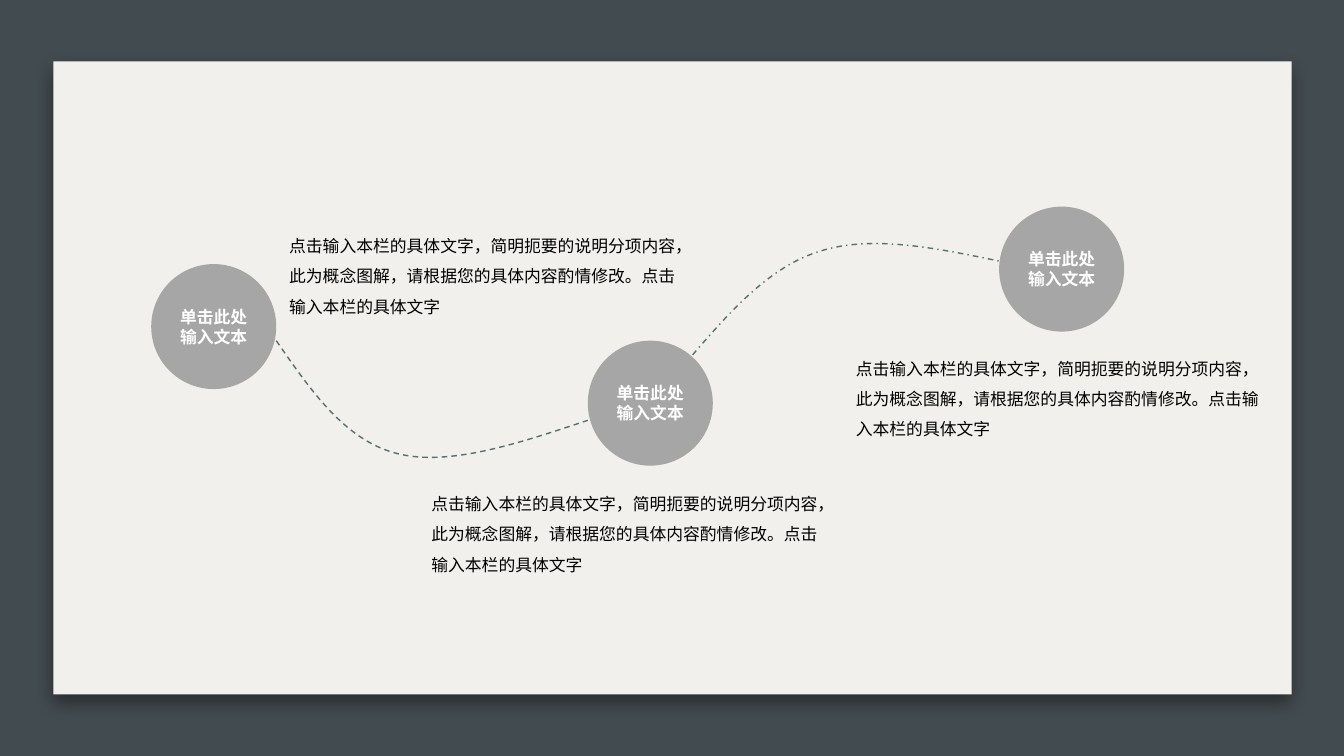
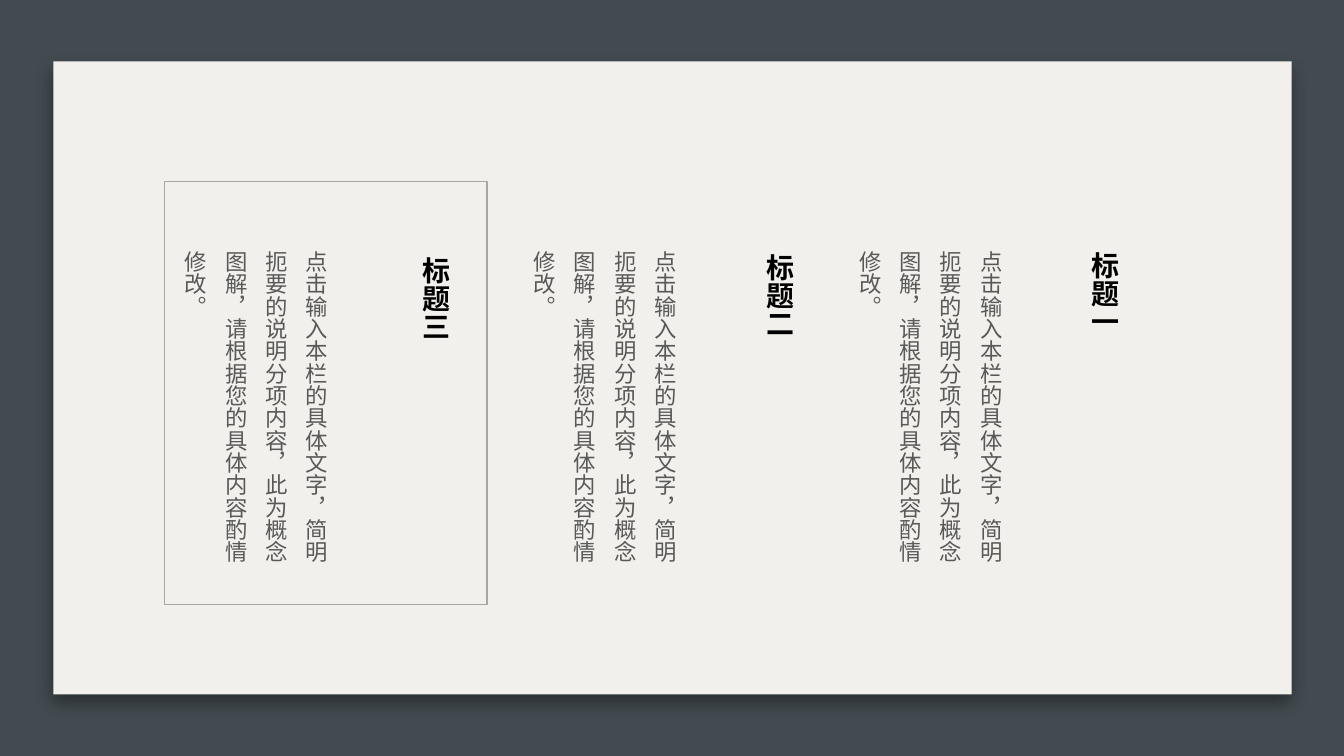
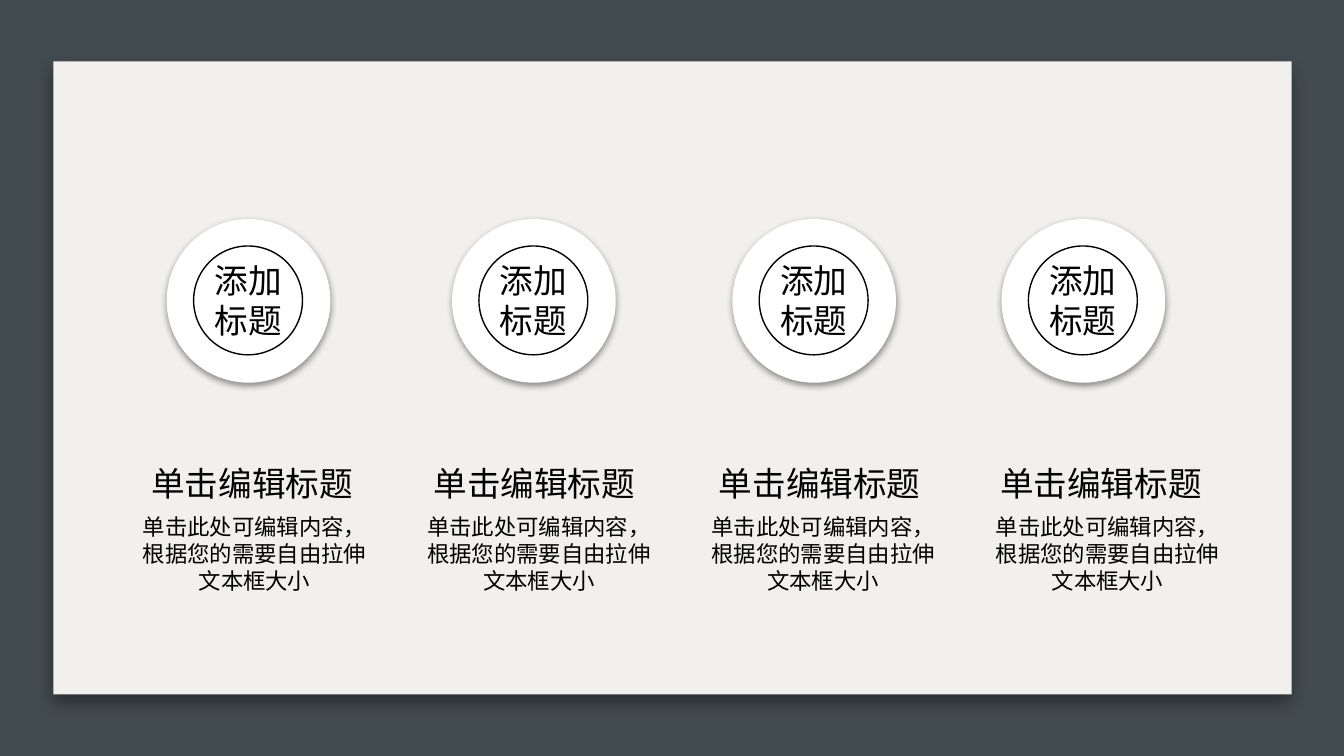
from lxml import etree
from pptx import Presentation
from pptx import util as u
from pptx.dml.color import RGBColor
from pptx.enum import dml, shapes, text
from pptx.oxml import ns

PX = 9144  # EMU per px, 100 px to the inch
FONT = "Noto Sans CJK SC"
COLORS = {"slate": "424B50", "paper": "F1F0EC", "grey": "A6A6A6", "green": "57706C",
          "white": "FFFFFF", "black": "000000", "text": "595959"}
# Shadows cast straight down: opacity in percent, blur and distance in points
PANEL_SHADOW = (40, 12, 6)
RING_SHADOW = (42, 5, 2)

CENTER = {"alignment": text.PP_ALIGN.CENTER}
LOOSE = {"line_spacing": 1.5}
NO_INSETS = dict.fromkeys(("margin_left", "margin_top", "margin_right", "margin_bottom"), 0)


def draw(page, kind, at, fill=None, line=None, shadow=None):
    """Add a preset shape at (left, top, width, height) px."""
    shape = page.shapes.add_shape(kind, *(value * PX for value in at))
    shape.shadow.inherit = False
    if fill:
        shape.fill.solid()
        shape.fill.fore_color.rgb = RGBColor.from_string(COLORS[fill])
    else:
        shape.fill.background()
    if line:
        shape.line.color.rgb = RGBColor.from_string(COLORS[line])
        shape.line.width = u.Pt(1)
    else:
        shape.line.fill.background()
    if shadow:
        alpha, blur, distance = shadow
        effects = shape.element.spPr.find(ns.qn("a:effectLst"))
        outer = etree.SubElement(effects, ns.qn("a:outerShdw"), blurRad=str(u.Pt(blur)),
                                 dist=str(u.Pt(distance)), dir="5400000", algn="t",
                                 rotWithShape="0")
        color = etree.SubElement(outer, ns.qn("a:srgbClr"), val=COLORS["black"])
        etree.SubElement(color, ns.qn("a:alpha"), val=str(alpha * 1000))
    return shape


def write(page, target, lines, size, color="black", bold=False, para_format=None,
          frame_format=None, vertical=False):
    """Fill a shape with text, or a new text box when target is a px rectangle."""
    box = target
    if isinstance(target, tuple):
        box = page.shapes.add_textbox(*(value * PX for value in target))
        box.text_frame.auto_size = text.MSO_AUTO_SIZE.SHAPE_TO_FIT_TEXT
    frame = box.text_frame
    frame.word_wrap = True
    for name, value in (frame_format or {}).items():
        setattr(frame, name, value)
    if vertical:
        box.element.txBody.bodyPr.set("vert", "eaVert")
    for index, line in enumerate(lines):
        para = frame.add_paragraph() if index else frame.paragraphs[0]
        for name, value in (para_format or {}).items():
            setattr(para, name, value)
        span = para.add_run()
        span.text = line
        for name, value in {"name": FONT, "size": u.Pt(size), "bold": bold}.items():
            setattr(span.font, name, value)
        span.font.color.rgb = RGBColor.from_string(COLORS[color])
        etree.SubElement(span.font._element, ns.qn("a:ea"), typeface=FONT)


RECT = shapes.MSO_SHAPE.RECTANGLE
OVAL = shapes.MSO_SHAPE.OVAL

deck = Presentation()
deck.slide_width, deck.slide_height = 1333 * PX, 750 * PX

# Shared backdrop: slate ground with a raised paper panel
pages = []
for _ in range(3):
    page = deck.slides.add_slide(deck.slide_layouts[6])
    draw(page, RECT, (0, 0, 1333, 750), "slate")
    draw(page, RECT, (53, 61, 1228, 628), "paper", shadow=PANEL_SHADOW)
    pages.append(page)
path_page, column_page, ring_page = pages

# Slide 1: three stops along a curved path
for left, top in ((150, 262), (583, 338), (991, 205)):
    stop = draw(path_page, OVAL, (left, top, 124, 124), "grey")
    write(path_page, stop, ["单击此处输入文本"], 12, "white", True, CENTER,
          {"vertical_anchor": text.MSO_ANCHOR.MIDDLE})

# Each curve is a start point, then three points for each Bézier segment
curves = [
    (dml.MSO_LINE.DASH, [(274, 338), (308, 387), (342, 437), (394, 450),
                         (445, 463), (514, 440), (583, 417)]),
    (dml.MSO_LINE.DASH_DOT, [(687, 352), (725, 308), (764, 264), (814, 249),
                             (865, 233), (928, 246), (991, 259)]),
]
for dash, points in curves:
    builder = path_page.shapes.build_freeform(*points[0], scale=PX)
    builder.add_line_segments(points[1:], close=False)
    curve = builder.convert_to_shape()
    curve.shadow.inherit = False
    curve.fill.background()
    curve.line.color.rgb = RGBColor.from_string(COLORS["green"])
    curve.line.width = u.Pt(1)
    curve.line.dash_style = dash
    outline = curve.element.find(".//" + ns.qn("a:path"))
    segments = outline.findall(ns.qn("a:lnTo"))
    for first in range(0, len(segments), 3):
        bezier = etree.SubElement(outline, ns.qn("a:cubicBezTo"))
        for segment in segments[first:first + 3]:
            bezier.append(segment[0])
            outline.remove(segment)

NOTE = "点击输入本栏的具体文字，简明扼要的说明分项内容，此为概念图解，请根据您的具体内容酌情修改。"
for left, top, width in ((277, 219, 410), (418, 475, 409), (839, 341, 429)):
    write(path_page, (left, top, width, 100), [NOTE + "点击输入本栏的具体文字"], 12,
          para_format=LOOSE)

# Slide 2: vertical columns, read from right to left
for title, title_left, title_top, note_left in (
        ("标题一", 1064, 240, 874), ("标题二", 742, 242, 551), ("标题三", 401, 245, 205)):
    write(column_page, (note_left, 239, 140, 340), [NOTE], 16, "text",
          para_format=LOOSE, vertical=True)
    write(column_page, (title_left, title_top, 53, 356), [title], 20, bold=True, vertical=True)
draw(column_page, RECT, (163, 180, 320, 420), line="grey")

# Slide 3: four ringed titles with captions
RING, INNER, LABEL = 161, 108, 142
for index, (ring_left, heading_left) in enumerate(
        ((166, 122), (449, 402), (727, 685), (994, 964))):
    draw(ring_page, OVAL, (ring_left, 218, RING, RING), "white", "white", RING_SHADOW)
    inset = (RING - INNER) // 2
    draw(ring_page, OVAL, (ring_left + inset, 218 + inset, INNER, INNER), line="black")
    write(ring_page, (ring_left + (RING - LABEL) // 2, 253, LABEL, 90), ["添加", "标题"], 24,
          para_format=CENTER)
    write(ring_page, (heading_left, 459, 256, 40), ["单击编辑标题"], 24,
          para_format=CENTER, frame_format=NO_INSETS)
    write(ring_page, (137 + 282 * index, 509, 231, 80),
          ["单击此处可编辑内容，根据您的需要自由拉伸文本框大小"], 16,
          para_format=CENTER, frame_format=NO_INSETS)

deck.save("out.pptx")
